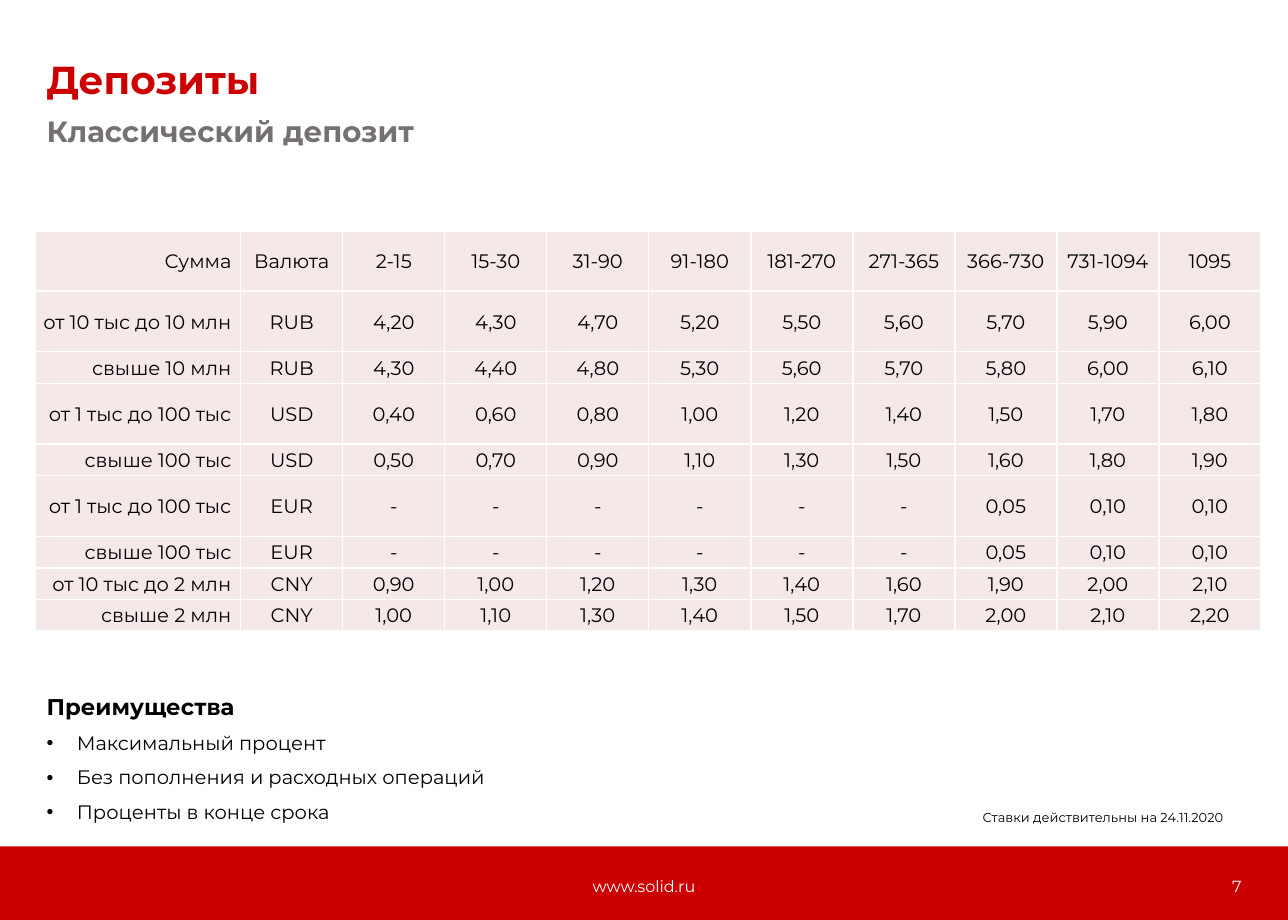
from lxml import etree
from pptx import Presentation
from pptx.dml.color import RGBColor
from pptx.enum import shapes, text
from pptx.oxml import ns
from pptx.util import Inches, Pt

FONT = "Montserrat"
COLORS = {"red": "CC0000", "gray": "767171", "black": "000000",
          "white": "FFFFFF", "cell": "F4E8E8"}
LEFT, CENTER, RIGHT, JUSTIFY = (text.PP_ALIGN.LEFT, text.PP_ALIGN.CENTER,
                                text.PP_ALIGN.RIGHT, text.PP_ALIGN.JUSTIFY)
TERMS = ["2-15", "15-30", "31-90", "91-180", "181-270", "271-365",
         "366-730", "731-1094", "1095"]
RATES = [
    ("от 10 тыс до 10 млн", "RUB", "4,20 4,30 4,70 5,20 5,50 5,60 5,70 5,90 6,00"),
    ("свыше 10 млн", "RUB", "4,30 4,40 4,80 5,30 5,60 5,70 5,80 6,00 6,10"),
    ("от 1 тыс до 100 тыс", "USD", "0,40 0,60 0,80 1,00 1,20 1,40 1,50 1,70 1,80"),
    ("свыше 100 тыс", "USD", "0,50 0,70 0,90 1,10 1,30 1,50 1,60 1,80 1,90"),
    ("от 1 тыс до 100 тыс", "EUR", "- - - - - - 0,05 0,10 0,10"),
    ("свыше 100 тыс", "EUR", "- - - - - - 0,05 0,10 0,10"),
    ("от 10 тыс до 2 млн", "CNY", "0,90 1,00 1,20 1,30 1,40 1,60 1,90 2,00 2,10"),
    ("свыше 2 млн", "CNY", "1,00 1,10 1,30 1,40 1,50 1,70 2,00 2,10 2,20"),
]
ROW_HEIGHTS = [0.51, 0.52, 0.27, 0.52, 0.27, 0.52, 0.27, 0.27, 0.27]
BENEFITS = ["Максимальный процент", "Без пополнения и расходных операций",
            "Проценты в конце срока"]


def rgb(name):
    """Return a named colour."""
    return RGBColor.from_string(COLORS[name])


def add_run(p, words, size, color="black", bold=False):
    """Add a formatted run to a paragraph."""
    r = p.add_run()
    r.text = words
    r.font.name = FONT
    r.font.size = Pt(size)
    r.font.bold = bold
    r.font.color.rgb = rgb(color)


def add_text(s, box, words, size, color="black", bold=False, align=LEFT,
             anchor=text.MSO_ANCHOR.TOP, spacing=0.9):
    """Add a text box with one paragraph and return its frame."""
    tf = s.shapes.add_textbox(*map(Inches, box)).text_frame
    tf.word_wrap = True
    tf.vertical_anchor = anchor
    p = tf.paragraphs[0]
    p.alignment = align
    p.line_spacing = spacing
    add_run(p, words, size, color, bold)
    return tf


def add_bullet(tf, words):
    """Add a bulleted paragraph to a text frame."""
    p = tf.add_paragraph()
    pPr = p._p.get_or_add_pPr()
    pPr.set("marL", str(Inches(0.26)))
    pPr.set("indent", str(-Inches(0.26)))
    etree.SubElement(pPr, ns.qn("a:buFont"), typeface="Arial")
    etree.SubElement(pPr, ns.qn("a:buChar"), char="•")
    p.line_spacing = 0.9
    p.space_before = Pt(8.3)
    add_run(p, words, 12)


def add_borders(cell):
    """Draw thin white borders around a cell."""
    tcPr = cell._tc.get_or_add_tcPr()
    for i, side in enumerate(("lnL", "lnR", "lnT", "lnB")):
        ln = etree.Element(ns.qn(f"a:{side}"), w=str(Pt(1)))
        fill = etree.SubElement(ln, ns.qn("a:solidFill"))
        etree.SubElement(fill, ns.qn("a:srgbClr"), val=COLORS["white"])
        tcPr.insert(i, ln)


def fill_cell(cell, words, is_label):
    """Format a cell and write its text."""
    cell.fill.solid()
    cell.fill.fore_color.rgb = rgb("cell")
    cell.vertical_anchor = text.MSO_ANCHOR.MIDDLE
    cell.margin_left = cell.margin_top = Inches(0.01)
    cell.margin_right = Inches(0.08 if is_label else 0.01)
    cell.margin_bottom = 0
    p = cell.text_frame.paragraphs[0]
    p.alignment = RIGHT if is_label else CENTER
    add_run(p, words, 12)
    add_borders(cell)


def add_rates(s):
    """Add the table of deposit rates."""
    rows = [["Сумма", "Валюта", *TERMS]]
    rows += [[amount, currency, *rates.split()] for amount, currency, rates in RATES]
    table = s.shapes.add_table(len(rows), len(rows[0]), Inches(0.3), Inches(1.98),
                               Inches(10.48), Inches(3.44)).table
    table.first_row = table.horz_banding = False
    for i, column in enumerate(table.columns):
        column.width = Inches(0.873 if i else 1.76)
    for row, height in zip(table.rows, ROW_HEIGHTS):
        row.height = Inches(height)
    for i, row in enumerate(rows):
        for j, words in enumerate(row):
            fill_cell(table.cell(i, j), words, j == 0)


def add_footer(s):
    """Add the red footer band with its address and page number."""
    band = s.shapes.add_shape(shapes.MSO_SHAPE.RECTANGLE, 0, Inches(7.24),
                              Inches(11.02), Inches(0.63))
    band.shadow.inherit = False
    band.fill.solid()
    band.fill.fore_color.rgb = rgb("red")
    band.line.fill.background()
    for box, words, align in (((3.65, 7.37, 3.72, 0.42), "www.solid.ru", CENTER),
                              ((8.24, 7.37, 2.48, 0.42), "7", RIGHT)):
        add_text(s, box, words, 9.9, "white", align=align,
                 anchor=text.MSO_ANCHOR.MIDDLE, spacing=1.0)


def main():
    """Build and save the deposit slide."""
    prs = Presentation()
    prs.slide_width, prs.slide_height = Inches(11.02), Inches(7.87)
    s = prs.slides.add_slide(prs.slide_layouts[6])
    add_footer(s)
    add_text(s, (0.3, 0.47, 10.41, 0.68), "Депозиты", 24, "red", True)
    add_text(s, (0.3, 0.95, 10.17, 0.68), "Классический депозит", 18, "gray", True)
    add_rates(s)
    tf = add_text(s, (0.3, 5.9, 5.37, 1.29), "Преимущества", 14, bold=True,
                  align=JUSTIFY)
    for benefit in BENEFITS:
        add_bullet(tf, benefit)
    add_text(s, (8.24, 6.89, 2.33, 0.29), "Ставки действительны на 24.11.2020", 8,
             align=RIGHT)
    prs.save("out.pptx")


if __name__ == "__main__":
    main()
